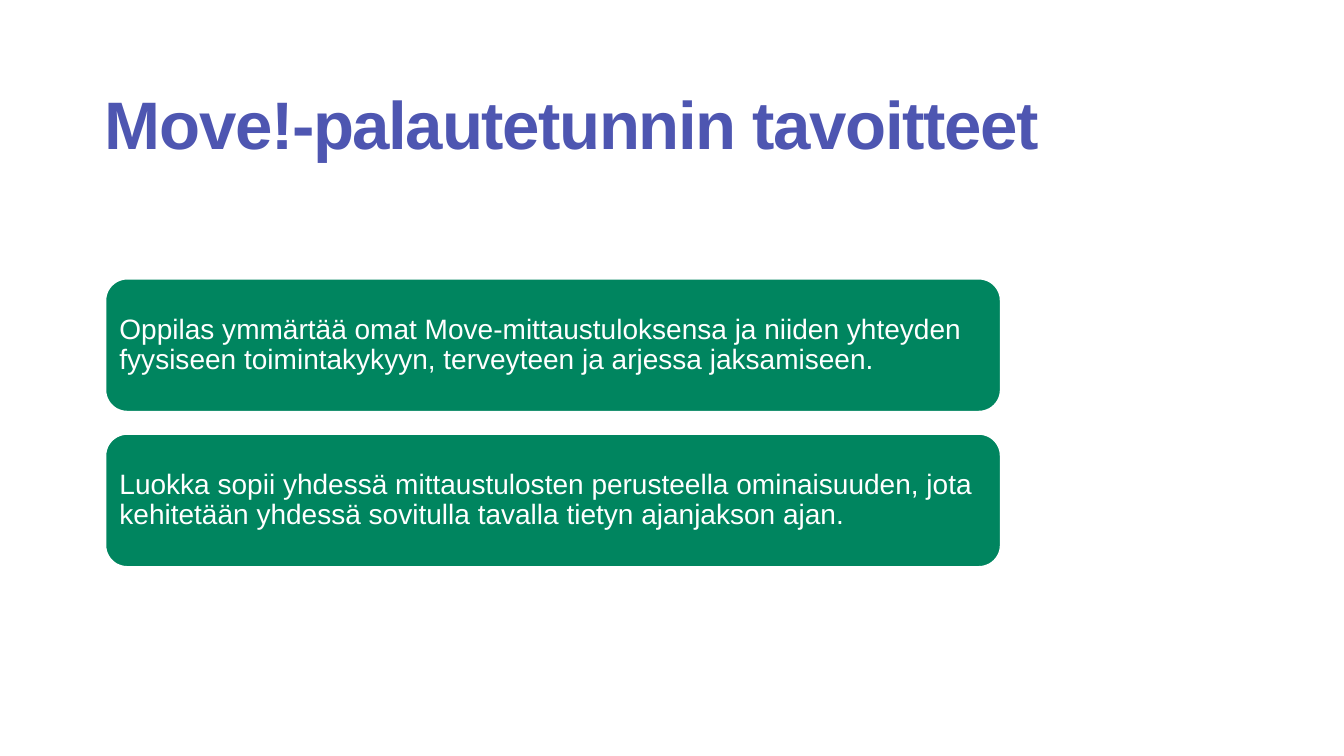
from pptx import Presentation
from pptx import util as u
from pptx.dml import color
from pptx.enum import shapes, text

TITLE = "Move!-palautetunnin tavoitteet"
GOALS = [
    "Oppilas ymmärtää omat Move-mittaustuloksensa ja niiden yhteyden "
    "fyysiseen toimintakykyyn, terveyteen ja arjessa jaksamiseen.",
    "Luokka sopii yhdessä mittaustulosten perusteella ominaisuuden, jota "
    "kehitetään yhdessä sovitulla tavalla tietyn ajanjakson ajan.",
]
FONT = "Arial"
BLUE, GREEN, WHITE = "4E56B1", "00855F", "FFFFFF"
LEFT = 1.04
GOAL_TOP, GOAL_STEP = 2.76, 1.54
GOAL_WIDTH, GOAL_HEIGHT = 8.89, 1.33


def rgb(value):
    return color.RGBColor.from_string(value)


def write(box, words, size, shade, spacing, inset, anchor, bold=False):
    frame = box.text_frame
    frame.word_wrap = True
    frame.vertical_anchor = anchor
    frame.margin_left = frame.margin_right = u.Inches(inset)
    frame.margin_top = frame.margin_bottom = u.Inches(inset)
    para = frame.paragraphs[0]
    para.alignment = text.PP_ALIGN.LEFT
    para.line_spacing = spacing
    span = para.add_run()
    span.text = words
    span.font.name = FONT
    span.font.size = u.Pt(size)
    span.font.bold = bold
    span.font.color.rgb = rgb(shade)
    return span


def add_title(page):
    box = page.shapes.add_textbox(
        u.Inches(LEFT), u.Inches(0.84), u.Inches(11.27), u.Inches(0.78))
    span = write(box, TITLE, 48, BLUE, 0.85, 0, text.MSO_ANCHOR.BOTTOM, True)
    span.font._element.set("spc", "-100")


def add_goal(page, index, words):
    box = page.shapes.add_shape(
        shapes.MSO_SHAPE.ROUNDED_RECTANGLE,
        u.Inches(LEFT), u.Inches(GOAL_TOP + index * GOAL_STEP),
        u.Inches(GOAL_WIDTH), u.Inches(GOAL_HEIGHT))
    box.shadow.inherit = False
    box.fill.solid()
    box.fill.fore_color.rgb = rgb(GREEN)
    box.line.color.rgb = rgb(WHITE)
    box.line.width = u.Pt(2)
    write(box, words, 20, WHITE, 0.9, 0.08, text.MSO_ANCHOR.MIDDLE)


def main():
    deck = Presentation()
    deck.slide_width, deck.slide_height = u.Inches(13.33), u.Inches(7.5)
    page = deck.slides.add_slide(deck.slide_layouts[6])
    add_title(page)
    for index, words in enumerate(GOALS):
        add_goal(page, index, words)
    deck.save("out.pptx")


if __name__ == "__main__":
    main()
